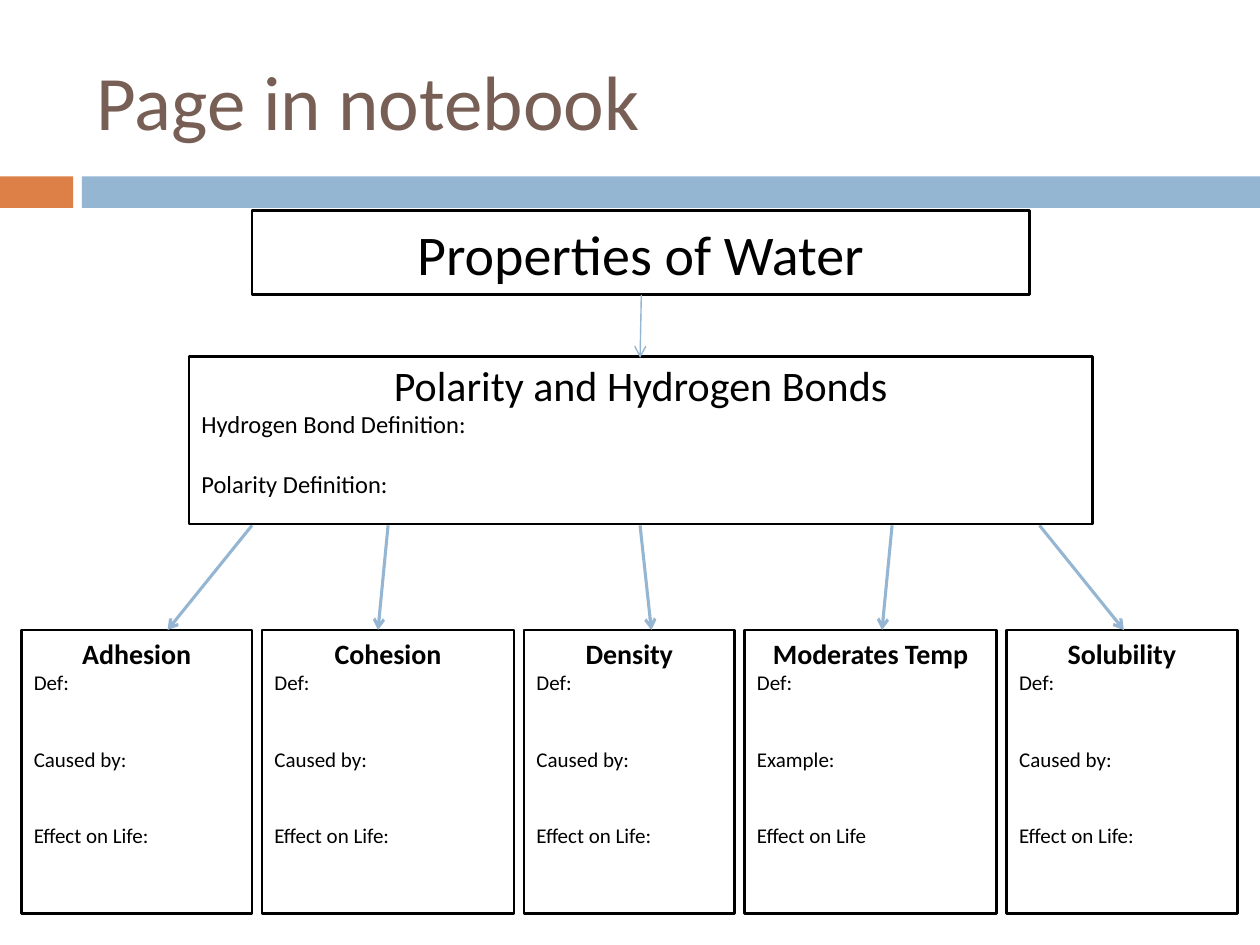
from dataclasses import dataclass
from typing import Optional

from lxml import etree
from pptx import Presentation
from pptx.dml.color import RGBColor
from pptx.enum import shapes, text
from pptx.oxml import ns
from pptx.util import Inches, Pt

BLACK = RGBColor(0x00, 0x00, 0x00)
WHITE = RGBColor(0xFF, 0xFF, 0xFF)
BLUE = RGBColor(0x94, 0xB6, 0xD2)
ORANGE = RGBColor(0xDD, 0x80, 0x47)
BROWN = RGBColor(0x77, 0x5F, 0x55)
FONT = "Calibri"
CENTER, LEFT = text.PP_ALIGN.CENTER, text.PP_ALIGN.LEFT
TOP, MIDDLE = text.MSO_ANCHOR.TOP, text.MSO_ANCHOR.MIDDLE


@dataclass
class Line:
    words: str
    size: float
    align: text.PP_ALIGN = LEFT
    bold: bool = False
    before: float = 0
    color: RGBColor = BLACK


@dataclass
class Box:
    left: float
    top: float
    width: float
    height: float
    fill: RGBColor = WHITE
    outline: Optional[RGBColor] = BLACK


@dataclass
class Arrow:
    start: tuple[float, float]
    end: tuple[float, float]
    weight: float = 1.75


@dataclass
class WaterProperty:
    name: str
    width: float
    middle: str = "Caused by:"
    effect: str = "Effect on Life:"


def write(frame, lines: list[Line], anchor=TOP, margin_top: float = 0.05) -> None:
    frame_format = {"word_wrap": True, "vertical_anchor": anchor,
                    "margin_top": Inches(margin_top)}
    for key, value in frame_format.items():
        setattr(frame, key, value)
    for index, line in enumerate(lines):
        paragraph = frame.add_paragraph() if index else frame.paragraphs[0]
        paragraph.alignment = line.align
        paragraph.space_before = Pt(line.before)
        run = paragraph.add_run()
        run.text = line.words
        font_format = {"name": FONT, "size": Pt(line.size), "bold": line.bold}
        for key, value in font_format.items():
            setattr(run.font, key, value)
        run.font.color.rgb = line.color


def draw_box(slide, box: Box):
    edges = (Inches(n) for n in (box.left, box.top, box.width, box.height))
    rectangle = slide.shapes.add_shape(shapes.MSO_SHAPE.RECTANGLE, *edges)
    rectangle.shadow.inherit = False
    rectangle.fill.solid()
    rectangle.fill.fore_color.rgb = box.fill
    if box.outline is None:
        rectangle.line.fill.background()
    else:
        rectangle.line.color.rgb = box.outline
        rectangle.line.width = Pt(1.5)
    return rectangle.text_frame


def draw_arrow(slide, arrow: Arrow) -> None:
    ends = (Inches(n) for n in arrow.start + arrow.end)
    connector = slide.shapes.add_connector(shapes.MSO_CONNECTOR.STRAIGHT, *ends)
    connector.line.color.rgb = BLUE
    connector.line.width = Pt(arrow.weight)
    outline = connector.line._get_or_add_ln()
    etree.SubElement(outline, ns.qn("a:tailEnd"), type="arrow")
    etree.SubElement(connector._element.spPr, ns.qn("a:effectLst"))


PROPERTIES = [
    WaterProperty("Adhesion", 1.83),
    WaterProperty("Cohesion", 2),
    WaterProperty("Density", 1.67),
    WaterProperty("Moderates Temp", 2, "Example:", "Effect on Life"),
    WaterProperty("Solubility", 1.83),
]
HUB_BOTTOM, ROW_TOP, GAP = 4.17, 5, 0.08
FAN = [(2, 1.33), (3.08, 3), (5.08, 5.17), (7.08, 7), (8.25, 8.92)]
BLANK_LINE_14, TWO_BLANK_LINES_12 = 17.1, 29.3


def main() -> None:
    deck = Presentation()
    deck.slide_width, deck.slide_height = Inches(10), Inches(7.5)
    slide = deck.slides.add_slide(deck.slide_layouts[6])

    # Title and the two-colour band
    draw_box(slide, Box(0, 1.4, 0.58, 0.25, ORANGE, None))
    draw_box(slide, Box(0.65, 1.4, 9.35, 0.25, BLUE, None))
    title = slide.shapes.add_textbox(Inches(0.67), Inches(0.25), Inches(8.92), Inches(1.08))
    write(title.text_frame, [Line("Page in notebook", 44, color=BROWN)], MIDDLE)

    # Topic
    topic = draw_box(slide, Box(2, 1.67, 6.17, 0.67))
    write(topic, [Line("Properties of Water", 32, CENTER)], MIDDLE)

    # Row of properties
    left = 0.17
    for item in PROPERTIES:
        card = draw_box(slide, Box(left, ROW_TOP, item.width, 2.25))
        write(card, [
            Line(item.name, 16, CENTER, bold=True),
            Line("Def:", 12),
            Line(item.middle, 12, before=TWO_BLANK_LINES_12),
            Line(item.effect, 12, before=TWO_BLANK_LINES_12),
        ])
        left += item.width + GAP

    # Arrows from the hub to each property
    for start, end in FAN:
        draw_arrow(slide, Arrow((start, HUB_BOTTOM), (end, ROW_TOP)))

    # Hub with definitions, and the arrow leading to it
    hub = draw_box(slide, Box(1.5, 2.83, 7.17, 1.33))
    write(hub, [
        Line("Polarity and Hydrogen Bonds", 24, CENTER),
        Line("Hydrogen Bond Definition:", 14),
        Line("Polarity Definition:", 14, before=BLANK_LINE_14),
    ], margin_top=0.02)
    draw_arrow(slide, Arrow((5.09, 2.34), (5.08, 2.84), 0.79))

    deck.save("out.pptx")


if __name__ == "__main__":
    main()
